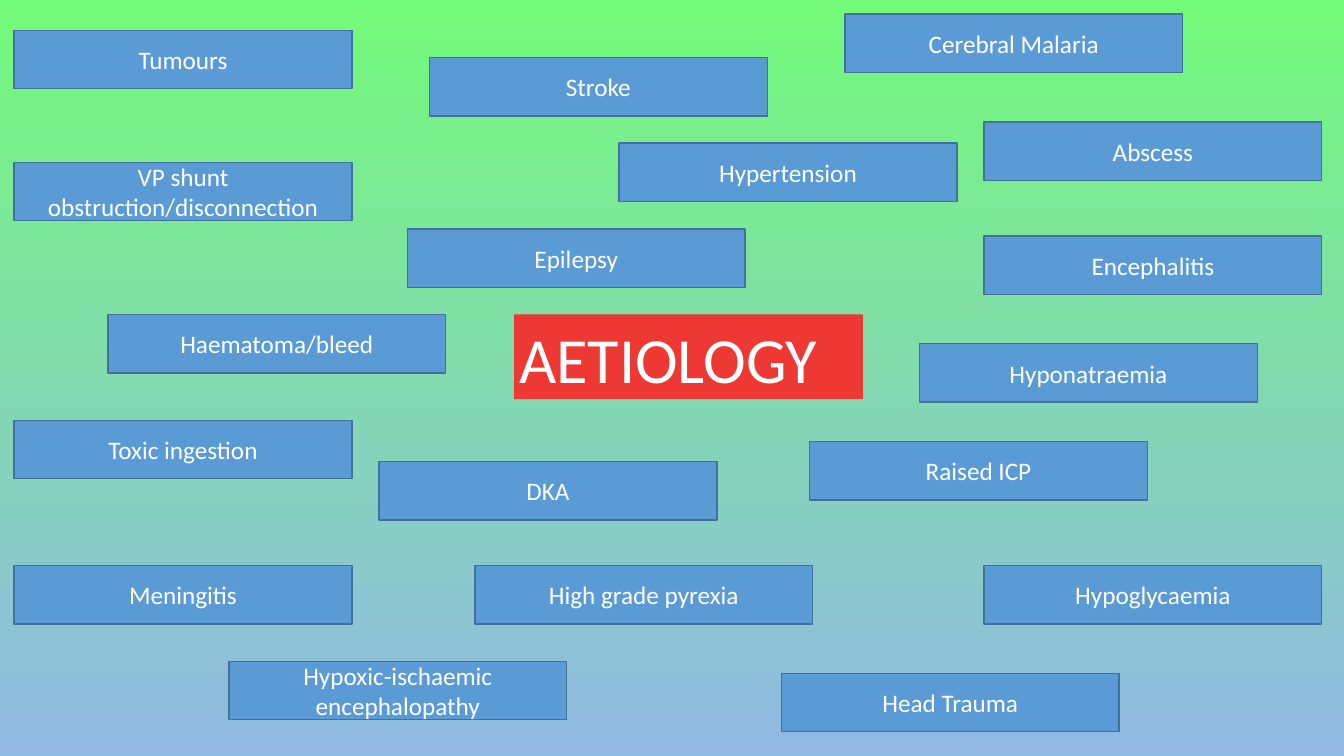
from dataclasses import dataclass

from pptx import Presentation
from pptx.dml.color import RGBColor
from pptx.enum.shapes import MSO_SHAPE as Preset
from pptx.enum.text import MSO_ANCHOR as Anchor, PP_ALIGN as Align
from pptx.shapes.autoshape import Shape
from pptx.slide import Slide
from pptx.util import Inches, Pt

COLOURS = {
    "sky_top": "73FA79",
    "sky_bottom": "91B9E4",
    "cause": "5B9BD5",
    "cause_edge": "42719B",
    "title": "ED3833",
    "text": "FFFFFF",
}
FONT = "Calibri"
CAUSE_WIDTH, CAUSE_HEIGHT = 3.35, 0.58
INSET = Inches(0.05)
LEFT_COLUMN, RIGHT_COLUMN = 0.14, 9.76
LOWER_ROW = 5.61


@dataclass(frozen=True)
class Cause:
    label: str
    left: float
    top: float


CAUSES = [
    Cause("Tumours", LEFT_COLUMN, 0.3),
    Cause("Haematoma/bleed", 1.07, 3.12),
    Cause("Encephalitis", RIGHT_COLUMN, 2.34),
    Cause("High grade pyrexia", 4.71, LOWER_ROW),
    Cause("Meningitis", LEFT_COLUMN, LOWER_ROW),
    Cause("Head Trauma", 7.75, 6.68),
    Cause("Abscess", RIGHT_COLUMN, 1.21),
    Cause("Toxic ingestion", LEFT_COLUMN, 4.17),
    Cause("Epilepsy", 4.04, 2.27),
    Cause("Hypoglycaemia", RIGHT_COLUMN, LOWER_ROW),
    Cause("Hyponatraemia", 9.12, 3.41),
    Cause("Hypoxic-ischaemic encephalopathy", 2.27, 6.56),
    Cause("VP shunt obstruction/disconnection", LEFT_COLUMN, 1.61),
    Cause("Stroke", 4.26, 0.57),
    Cause("Hypertension", 6.14, 1.42),
    Cause("Raised ICP", 8.03, 4.38),
    Cause("DKA", 3.76, 4.58),
    Cause("Cerebral Malaria", 8.38, 0.14),
]


def colour(name: str) -> RGBColor:
    """Return the named colour of the slide."""
    return RGBColor.from_string(COLOURS[name])


def paint_background(slide: Slide) -> None:
    """Fill the background with a gradient from top to bottom."""
    fill = slide.background.fill
    fill.gradient()
    fill.gradient_angle = 270
    for stop, name in zip(fill.gradient_stops, ("sky_top", "sky_bottom")):
        stop.color.rgb = colour(name)


def add_label(slide: Slide, label: str, left: float, top: float, width: float,
              height: float, fill: str, size: int, align: Align, anchor: Anchor) -> Shape:
    """Draw a filled rectangle holding one line of thought."""
    panel = slide.shapes.add_shape(
        Preset.RECTANGLE, Inches(left), Inches(top), Inches(width), Inches(height))
    panel.shadow.inherit = False
    panel.fill.solid()
    panel.fill.fore_color.rgb = colour(fill)
    frame = panel.text_frame
    frame.word_wrap = True
    frame.vertical_anchor = anchor
    frame.margin_left = frame.margin_right = INSET
    frame.margin_top = frame.margin_bottom = INSET
    paragraph = frame.paragraphs[0]
    paragraph.text = label
    paragraph.alignment = align
    paragraph.font.name = FONT
    paragraph.font.size = Pt(size)
    paragraph.font.color.rgb = colour("text")
    return panel


def add_cause(slide: Slide, cause: Cause) -> None:
    """Draw one cause as an outlined blue box."""
    box = add_label(slide, cause.label, cause.left, cause.top, CAUSE_WIDTH,
                    CAUSE_HEIGHT, "cause", 18, Align.CENTER, Anchor.MIDDLE)
    box.line.color.rgb = colour("cause_edge")
    box.line.width = Pt(1)


def add_title(slide: Slide) -> None:
    """Draw the red heading in the middle of the slide."""
    heading = add_label(slide, "AETIOLOGY", 5.1, 3.12, 3.46, 0.84,
                        "title", 46, Align.LEFT, Anchor.TOP)
    heading.line.fill.background()


def main() -> None:
    """Build the slide and save it."""
    deck = Presentation()
    deck.slide_width, deck.slide_height = Inches(13.33), Inches(7.5)
    slide = deck.slides.add_slide(deck.slide_layouts[6])
    paint_background(slide)
    for cause in CAUSES:
        add_cause(slide, cause)
    add_title(slide)
    deck.save("out.pptx")


if __name__ == "__main__":
    main()
